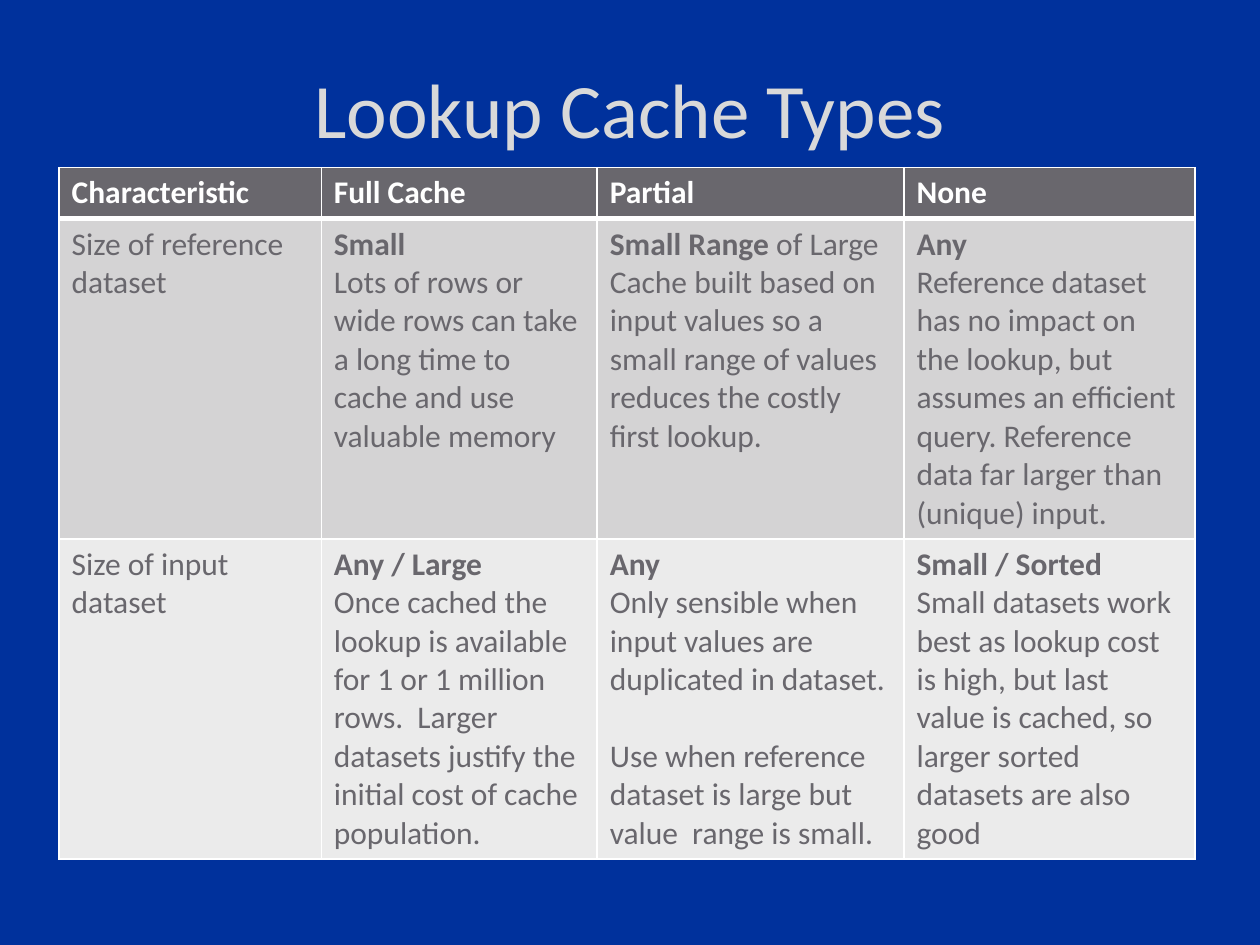
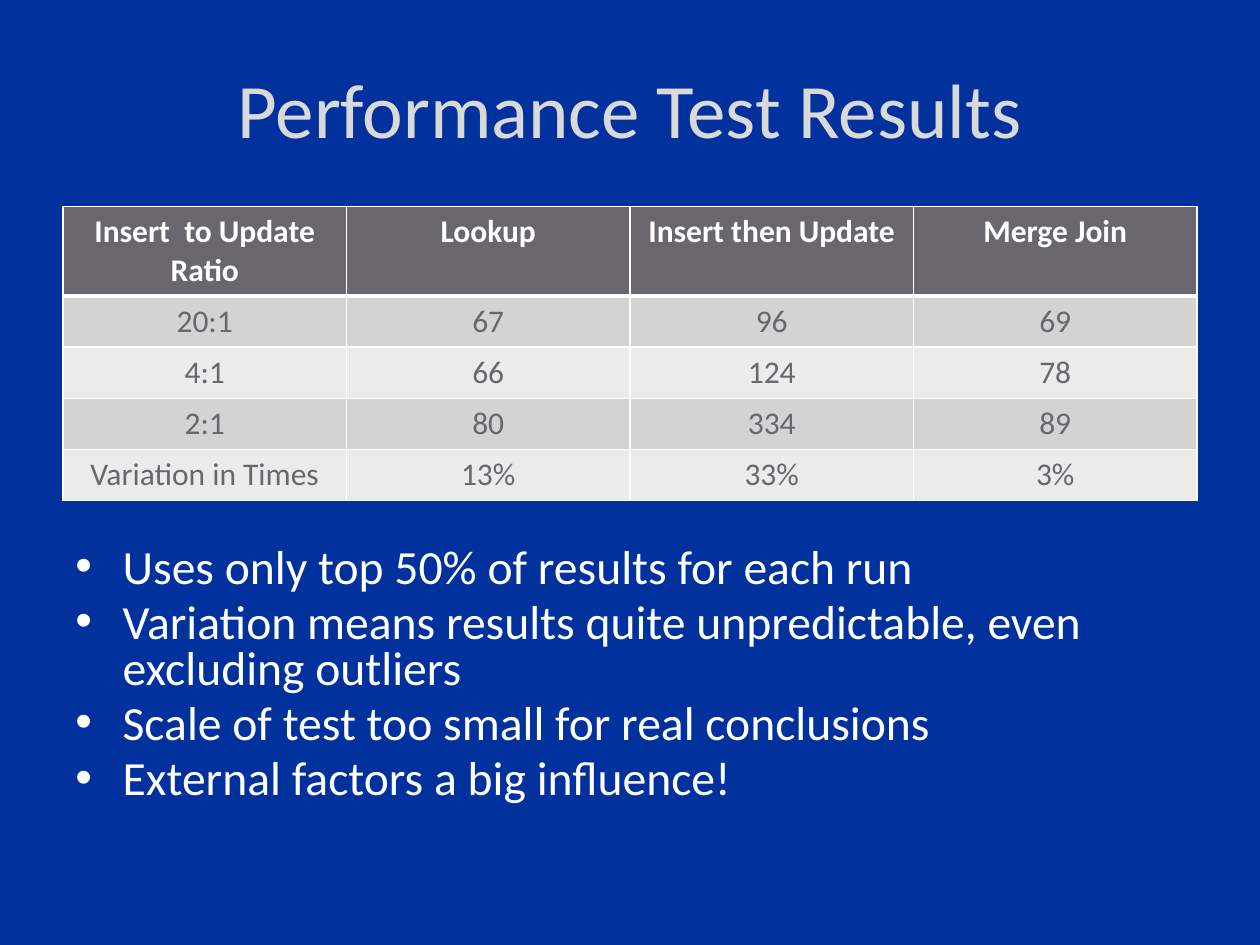
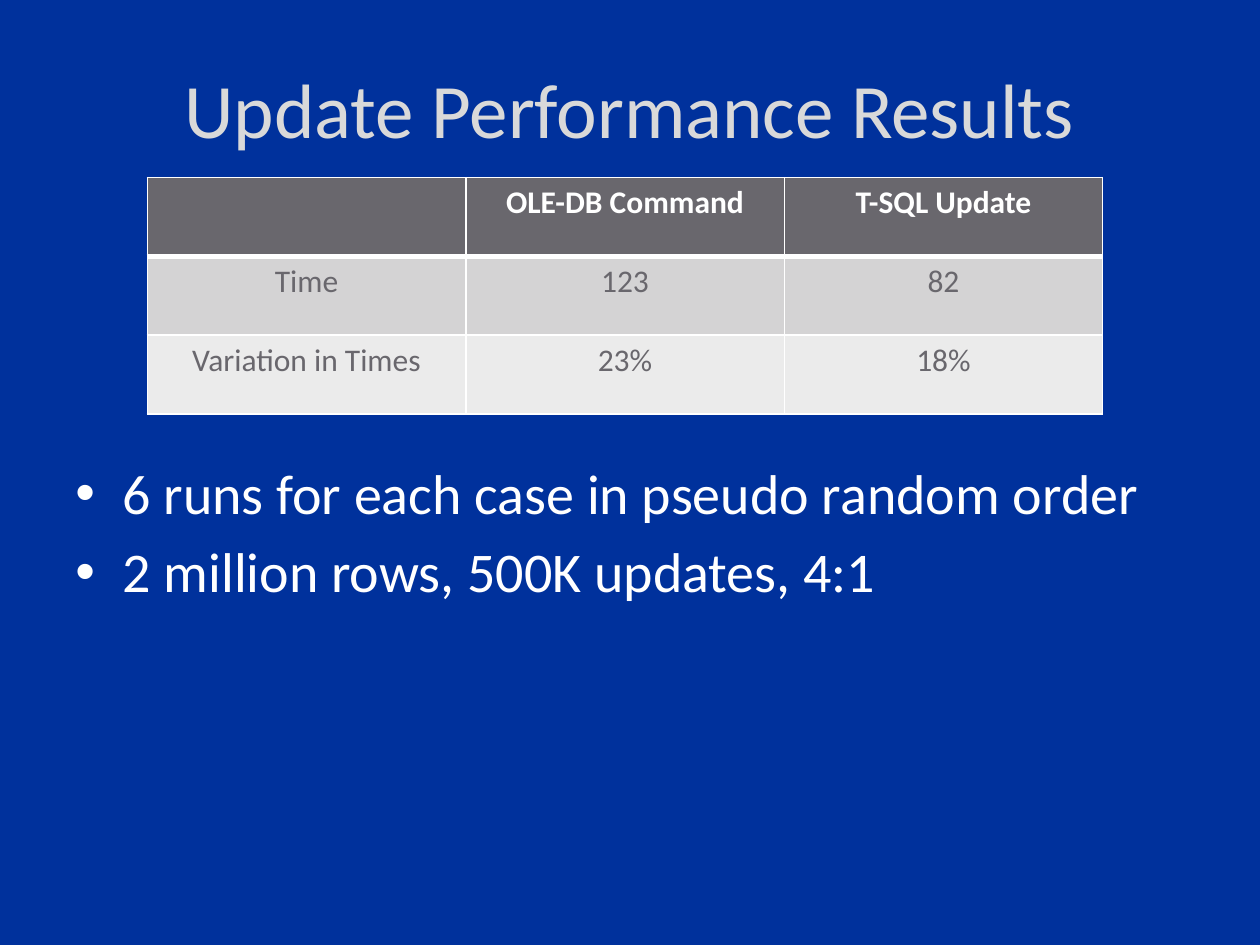
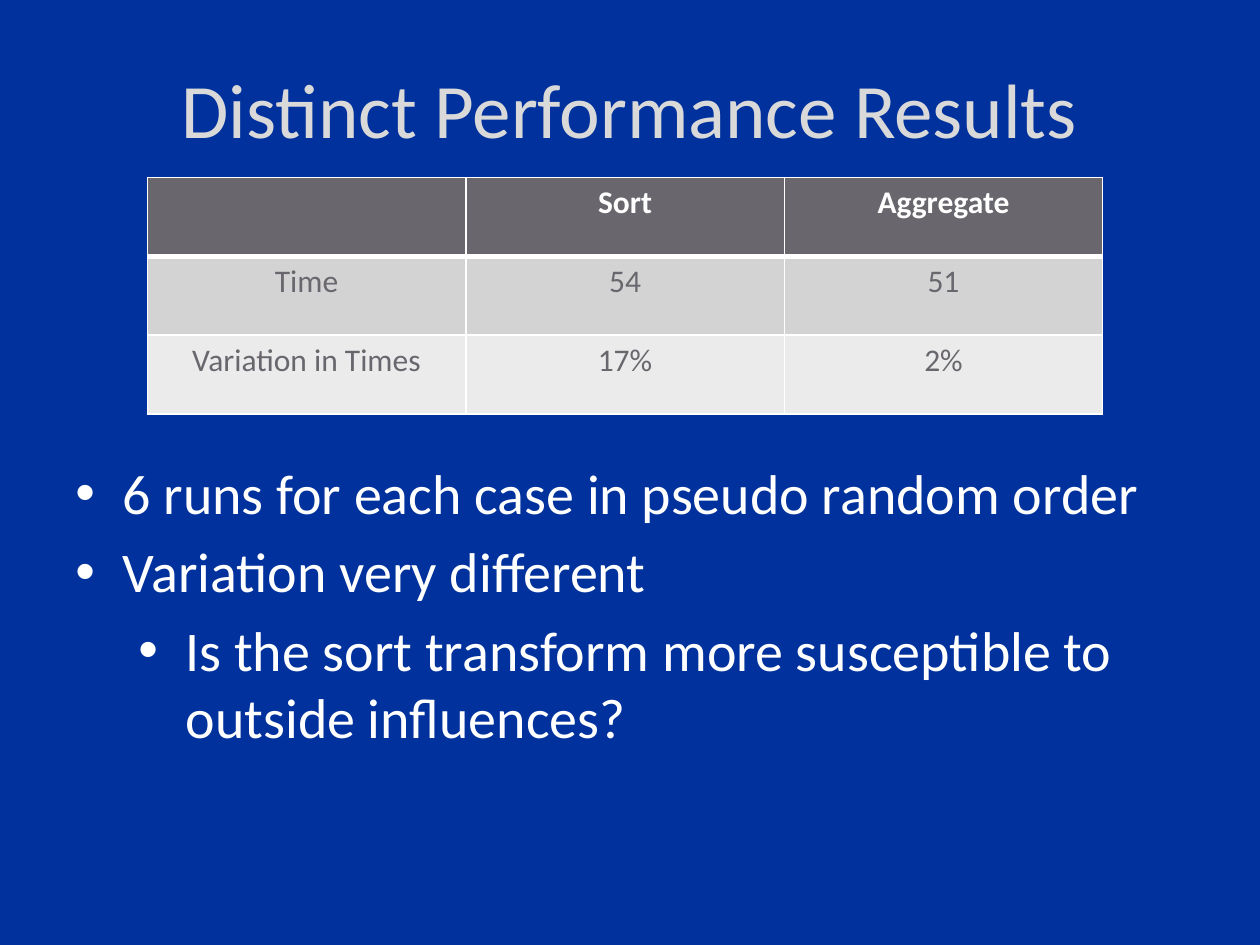
"""Builds four slides on lookup caching and performance test results."""
from lxml.etree import SubElement
from pptx import Presentation
from pptx.dml.color import RGBColor
from pptx.enum.text import MSO_ANCHOR, PP_ALIGN
from pptx.oxml import parse_xml
from pptx.oxml.ns import nsdecls, qn
from pptx.util import Pt

FONT = "Calibri"
COLORS = {
    "background": "00319C",
    "title": "D9D9D9",
    "light": "FFFFFF",
    "header": "69676D",
    "odd_row": "D4D3D4",
    "even_row": "EBEBEB",
}
TITLE_FRAME = (36, 21.6, 648, 80)
TABLE_SIZE = 18
BLANK_LINE = 22
INDENT = 27
LEVEL_STEP = 36

SMALL_TABLE = {"left": 84.2, "top": 101.5, "columns": [182] * 3,
               "heights": [45] * 3, "align": PP_ALIGN.CENTER}
LARGE_BULLETS = {"frame": (36, 258.5, 648, 208), "size": 32, "spacing": 1}

SLIDES = [
    {
        "title": "Lookup Cache Types",
        "table": {"left": 33.8, "top": 95.8, "columns": [149.8, 157.7, 175.3, 166.4],
                  "heights": [29.2, 182.9, 182.9], "align": PP_ALIGN.LEFT},
        "rows": [
            ["Characteristic", "Full Cache", "Partial", "None"],
            [
                "Size of reference dataset",
                [("Small", ""),
                 "Lots of rows or wide rows can take a long time to cache and use valuable memory"],
                [("Small Range ", "of Large"),
                 "Cache built based on input values so a small range of values reduces "
                 "the costly first lookup."],
                [("Any", ""),
                 "Reference dataset has no impact on the lookup, but assumes an efficient query. "
                 "Reference data far larger than (unique) input."],
            ],
            [
                "Size of input dataset",
                [("Any / Large", ""),
                 "Once cached the lookup is available for 1 or 1 million rows.  Larger datasets "
                 "justify the initial cost of cache population."],
                [("Any", ""),
                 "Only sensible when input values are duplicated in dataset.",
                 "Use when reference dataset is large but value  range is small."],
                [("Small / Sorted", ""),
                 "Small datasets work best as lookup cost is high, but last value is cached, "
                 "so larger sorted datasets are also good"],
            ],
        ],
    },
    {
        "title": "Performance Test Results",
        "table": {"left": 36, "top": 118, "columns": [162] * 4,
                  "heights": [51.2] + [29.2] * 4, "align": PP_ALIGN.CENTER},
        "rows": [
            ["Insert  to Update Ratio", "Lookup", "Insert then Update", "Merge Join"],
            ["20:1", "67", "96", "69"],
            ["4:1", "66", "124", "78"],
            ["2:1", "80", "334", "89"],
            ["Variation in Times", "13%", "33%", "3%"],
        ],
        "style": {"frame": (36, 309.6, 648, 157.7), "size": 27.2, "spacing": 0.8},
        "bullets": [
            (0, "Uses only top 50% of results for each run"),
            (0, "Variation means results quite unpredictable, even excluding outliers"),
            (0, "Scale of test too small for real conclusions"),
            (0, "External factors a big influence!"),
        ],
    },
    {
        "title": "Update Performance Results",
        "table": SMALL_TABLE,
        "rows": [
            ["", "OLE-DB Command", "T-SQL Update"],
            ["Time", "123", "82"],
            ["Variation in Times", "23%", "18%"],
        ],
        "style": LARGE_BULLETS,
        "bullets": [
            (0, "6 runs for each case in pseudo random order"),
            (0, "2 million rows, 500K updates, 4:1"),
        ],
    },
    {
        "title": "Distinct Performance Results",
        "table": SMALL_TABLE,
        "rows": [
            ["", "Sort", "Aggregate"],
            ["Time", "54", "51"],
            ["Variation in Times", "17%", "2%"],
        ],
        "style": LARGE_BULLETS,
        "bullets": [
            (0, "6 runs for each case in pseudo random order"),
            (0, "Variation very different"),
            (1, "Is the sort transform more susceptible to outside influences?"),
        ],
    },
]


def color(name):
    return RGBColor.from_string(COLORS[name])


def set_font(font, size, color_name):
    font.name = FONT
    font.size = Pt(size)
    font.color.rgb = color(color_name)


def add_text_frame(page, frame):
    text_frame = page.shapes.add_textbox(*map(Pt, frame)).text_frame
    text_frame.word_wrap = True
    return text_frame


def paragraph_at(text_frame, index):
    return text_frame.add_paragraph() if index else text_frame.paragraphs[0]


def add_title(page, title):
    text_frame = add_text_frame(page, TITLE_FRAME)
    text_frame.vertical_anchor = MSO_ANCHOR.MIDDLE
    para = text_frame.paragraphs[0]
    para.text = title
    para.alignment = PP_ALIGN.CENTER
    set_font(para.font, 44, "title")


def set_borders(cell, row):
    widths = {"L": 1, "R": 1, "T": 3 if row == 1 else 1, "B": 3 if row == 0 else 1}
    properties = cell._tc.get_or_add_tcPr()
    for index, (side, width) in enumerate(widths.items()):
        properties.insert(index, parse_xml(
            f'<a:ln{side} {nsdecls("a")} w="{Pt(width)}"><a:solidFill>'
            f'<a:srgbClr val="{COLORS["light"]}"/></a:solidFill></a:ln{side}>'))


def fill_cell(cell, content, row, align):
    fill_name = "header" if row == 0 else "odd_row" if row % 2 else "even_row"
    cell.fill.solid()
    cell.fill.fore_color.rgb = color(fill_name)
    set_borders(cell, row)
    paragraphs = content if isinstance(content, list) else [content]
    for index, words in enumerate(paragraphs):
        para = paragraph_at(cell.text_frame, index)
        para.alignment = align
        if index > 1:
            para.space_before = Pt(BLANK_LINE)
        set_font(para.font, TABLE_SIZE, "header" if row else "light")
        para.font.bold = row == 0
        if isinstance(words, str):
            para.text = words
            continue
        for part, bold in zip(words, (True, False)):
            if part:
                span = para.add_run()
                span.text = part
                span.font.bold = bold


def add_grid(page, layout, rows):
    columns, heights = layout["columns"], layout["heights"]
    frame = (layout["left"], layout["top"], sum(columns), sum(heights))
    table = page.shapes.add_table(len(rows), len(columns), *map(Pt, frame)).table
    table.first_row = table.horz_banding = False
    for column, width in zip(table.columns, columns):
        column.width = Pt(width)
    for row, (contents, height) in enumerate(zip(rows, heights)):
        table.rows[row].height = Pt(height)
        for column, content in enumerate(contents):
            fill_cell(table.cell(row, column), content, row, layout["align"])


def add_bullets(page, style, bullets):
    text_frame = add_text_frame(page, style["frame"])
    for index, (level, words) in enumerate(bullets):
        para = paragraph_at(text_frame, index)
        para.text = words
        para.level = level
        para.line_spacing = style["spacing"]
        if index:
            para.space_before = Pt(round(style["size"] * 0.2, 1))
        properties = para._p.get_or_add_pPr()
        properties.set("marL", str(Pt(INDENT + level * LEVEL_STEP)))
        properties.set("indent", str(-Pt(INDENT)))
        SubElement(properties, qn("a:buFont"), typeface="Arial")
        SubElement(properties, qn("a:buChar"), char="•")
        set_font(para.font, style["size"], "light")


def main():
    deck = Presentation()
    deck.slide_width, deck.slide_height = Pt(720), Pt(540)
    for content in SLIDES:
        page = deck.slides.add_slide(deck.slide_layouts[6])
        page.background.fill.solid()
        page.background.fill.fore_color.rgb = color("background")
        add_title(page, content["title"])
        add_grid(page, content["table"], content["rows"])
        if "bullets" in content:
            add_bullets(page, content["style"], content["bullets"])
    deck.save("out.pptx")


if __name__ == "__main__":
    main()
